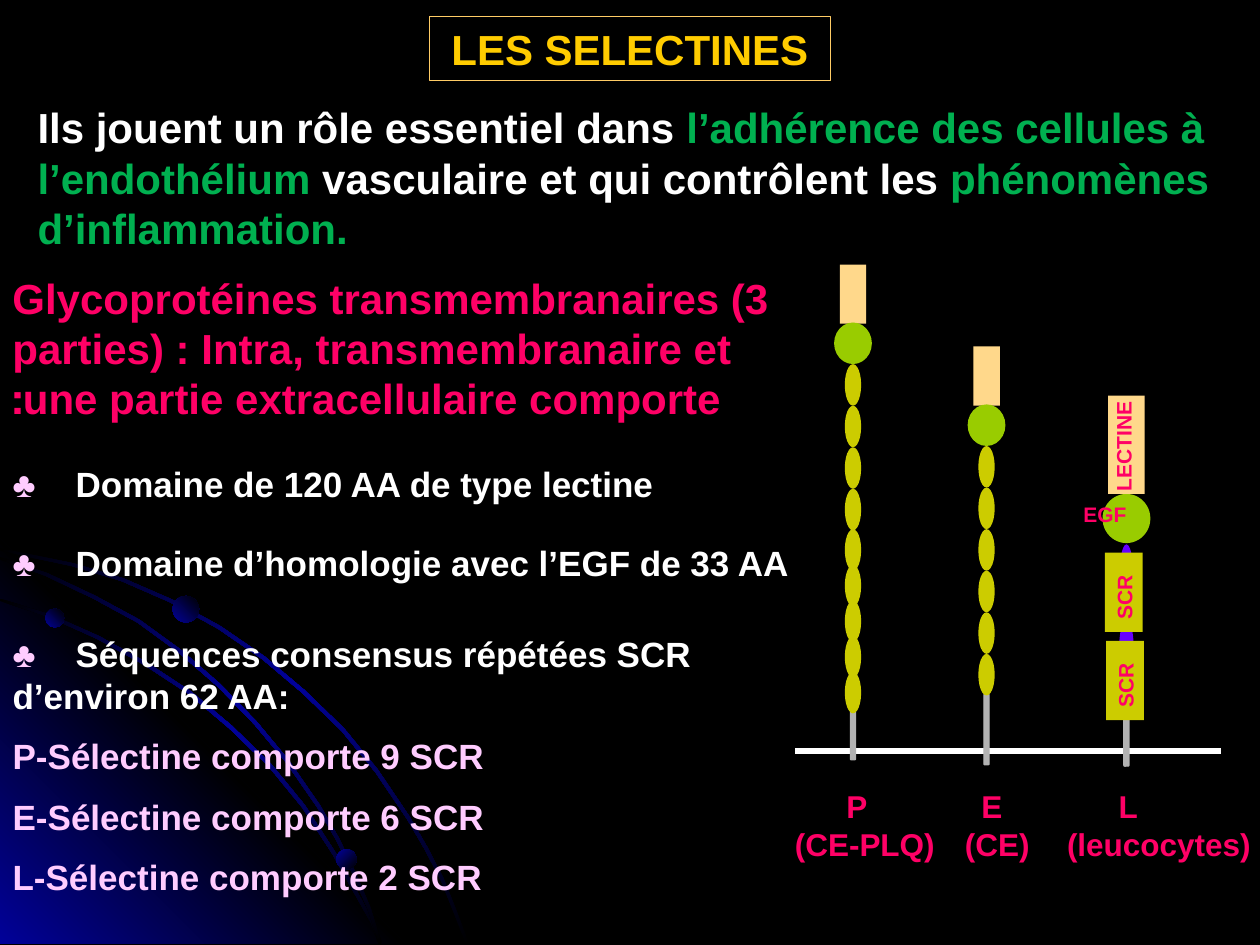
"""Build the slide on selectins, with its list and its membrane diagram."""
from dataclasses import dataclass

import lxml.etree
import pptx
import pptx.dml.color
import pptx.enum.shapes
import pptx.enum.text
import pptx.oxml.ns
import pptx.util

Inches = pptx.util.Inches
Pt = pptx.util.Pt
RGBColor = pptx.dml.color.RGBColor
Kind = pptx.enum.shapes.MSO_SHAPE
Align = pptx.enum.text.PP_ALIGN
Anchor = pptx.enum.text.MSO_ANCHOR
qn = pptx.oxml.ns.qn

BLACK = RGBColor(0, 0, 0)
WHITE = RGBColor(255, 255, 255)
NAVY = RGBColor(0x01, 0x01, 0x99)
ROSE = RGBColor(0xFF, 0x00, 0x66)
PINK = RGBColor(0xFF, 0xCC, 0xFF)
GREEN = RGBColor(0x00, 0xB0, 0x50)
LIME = RGBColor(0x99, 0xCC, 0x00)
OLIVE = RGBColor(0xCC, 0xCC, 0x00)
PEACH = RGBColor(0xFF, 0xD8, 0x8B)
GOLD = RGBColor(0xFF, 0xCC, 0x00)
AMBER = RGBColor(0xFF, 0xCC, 0x66)
GREY = RGBColor(0xB2, 0xB2, 0xB2)
VIOLET = RGBColor(0x66, 0x00, 0xFF)


@dataclass
class Chain:
    mid: float
    tops: list[float]
    stem: float
    length: float


@dataclass
class Label:
    left: float
    indent: float
    name: str
    cells: str


@dataclass
class Item:
    text: str
    gap: float
    club: bool = False


ARCS = [
    [(0, 4.36), (0.28, 4.42), (0.57, 4.48), (0.97, 4.6), (1.36, 4.77), (1.74, 4.98), (2.09, 5.22), (2.41, 5.49),
     (2.72, 5.79), (2.99, 6.12), (3.24, 6.49), (3.38, 6.73), (3.51, 6.98), (3.61, 7.23), (3.71, 7.49)],
    [(0, 4.76), (0.4, 4.89), (0.78, 5.06), (1.16, 5.27), (1.51, 5.5), (1.83, 5.77), (2.14, 6.07), (2.41, 6.4),
     (2.65, 6.77), (2.85, 7.13), (2.95, 7.31), (3.02, 7.49)],
    [(0, 4.43), (0.37, 4.56), (0.75, 4.74), (1.1, 4.93), (1.43, 5.17), (1.74, 5.44), (2.03, 5.74), (2.28, 6.04),
     (2.53, 6.4), (2.68, 6.66), (2.81, 6.93), (2.93, 7.21), (3.02, 7.49)],
]
BALLS = [(0.36, 4.83, 0.15, 315), (2.67, 6.74, 0.16, 45), (1.37, 4.73, 0.21, 315)]
CHAINS = [
    Chain(7.83, [3.54 + 0.33 * i for i in range(6)], 5.51, 0.56),
    Chain(6.77, [2.89 + 0.33 * i for i in range(4)] + [4.2 + 0.283 * i for i in range(5)], 5.61, 0.42),
]
LABELS = [
    Label(6.31, 0.41, "P", "(CE-PLQ)"),
    Label(7.66, 0.13, "E", "(CE)"),
    Label(8.47, 0.41, "L", "(leucocytes)"),
]
ITEMS = [
    Item("Domaine de 120 AA de type lectine", 0, True),
    Item("Domaine d’homologie avec l’EGF de 33 AA", 21, True),
    Item("Séquences consensus répétées SCR d’environ 62 AA:", 28, True),
    Item("P-Sélectine comporte 9 SCR", 10.5),
    Item("E-Sélectine comporte 6 SCR", 10.5),
    Item("L-Sélectine comporte 2 SCR", 10.5),
]
INTRO = [
    ("Ils jouent un rôle essentiel dans ", WHITE),
    ("l’adhérence des cellules à l’endothélium ", GREEN),
    ("vasculaire et qui contrôlent les ", WHITE),
    ("phénomènes d’inflammation.", GREEN),
]


def style(run, size: float, color: RGBColor) -> None:
    run.font.name = "Arial"
    run.font.size = Pt(size)
    run.font.bold = True
    run.font.color.rgb = color


def write(para, text: str, size: float, color: RGBColor) -> None:
    para.text = text
    para.alignment = Align.LEFT
    style(para.runs[0], size, color)


def place(shape, left: float, top: float, width: float, height: float) -> None:
    shape.left, shape.top = Inches(left), Inches(top)
    shape.width, shape.height = Inches(width), Inches(height)


def blend(shape, colors: list[RGBColor], angle: int) -> None:
    shape.shadow.inherit = False
    shape.line.fill.background()
    shape.fill.background()
    empty = shape.element.spPr.find(qn("a:noFill"))
    grad = lxml.etree.Element(qn("a:gradFill"), rotWithShape="1")
    stops = lxml.etree.SubElement(grad, qn("a:gsLst"))
    for i, color in enumerate(colors):
        stop = lxml.etree.SubElement(stops, qn("a:gs"), pos=str(100000 * i // (len(colors) - 1)))
        lxml.etree.SubElement(stop, qn("a:srgbClr"), val=str(color))
    lxml.etree.SubElement(grad, qn("a:lin"), ang=str(angle * 60000), scaled="1")
    empty.getparent().replace(empty, grad)


def outline(slide, points: list[tuple[float, float]]):
    spots = [(Inches(x), Inches(y)) for x, y in points]
    form = slide.shapes.build_freeform(*spots[0])
    form.add_line_segments(spots[1:], close=True)
    return form.convert_to_shape()


def block(slide, kind, mid: float, top: float, width: float, height: float, color: RGBColor):
    shape = slide.shapes.add_shape(kind, 0, 0, 0, 0)
    place(shape, mid - width / 2, top, width, height)
    shape.shadow.inherit = False
    shape.fill.solid()
    shape.fill.fore_color.rgb = color
    shape.line.fill.background()
    return shape


def stem(slide, mid: float, top: float, height: float) -> None:
    shape = block(slide, Kind.ROUNDED_RECTANGLE, mid, top, 0.04, height, GREY)
    shape.adjustments[0] = 0.17
    shape.line.color.rgb = GREY
    shape.line.width = Pt(0.75)


def note(slide, left: float, top: float, width: float, height: float):
    box = slide.shapes.add_textbox(0, 0, 0, 0)
    place(box, left, top, width, height)
    box.text_frame.word_wrap = True
    return box


def chain(slide, data: Chain) -> None:
    stem(slide, data.mid, data.stem, data.length)
    for top in reversed(data.tops):
        block(slide, Kind.OVAL, data.mid, top, 0.13, 0.33, OLIVE)
    head = data.tops[0] - 0.33
    block(slide, Kind.RECTANGLE, data.mid, head - 0.46, 0.21, 0.47, PEACH)
    block(slide, Kind.OVAL, data.mid, head, 0.3, 0.33, LIME)


def large(slide) -> None:
    mid = 8.94
    stem(slide, mid, 5.49, 0.59)
    for top in (4.9, 4.32):
        block(slide, Kind.OVAL, mid, top, 0.12, 0.59, VIOLET)
    block(slide, Kind.OVAL, mid, 3.92, 0.38, 0.39, LIME)
    block(slide, Kind.RECTANGLE, mid, 3.14, 0.29, 0.78, PEACH)
    box = note(slide, 8.4, 3.33, 1.03, 0.3)
    box.rotation = 270
    write(box.text_frame.paragraphs[0], "LECTINE", 12, ROSE)
    box = note(slide, 8.5, 3.93, 0.84, 0.3)
    write(box.text_frame.paragraphs[0], "EGF", 12, ROSE)
    for center, top in ((8.93, 5.25), (8.92, 4.55)):
        shape = block(slide, Kind.RECTANGLE, center, top, 0.63, 0.3, OLIVE)
        shape.rotation = 270
        write(shape.text_frame.paragraphs[0], "SCR", 12, ROSE)


def fill_list(body) -> None:
    place(body, 0, 3.62, 6.67, 3.6)
    frame = body.text_frame
    frame.auto_size = pptx.enum.text.MSO_AUTO_SIZE.NONE
    for i, item in enumerate(ITEMS):
        para = frame.add_paragraph() if i else frame.paragraphs[0]
        write(para, "♣\t" if item.club else item.text, 20, PINK)
        para.space_before = Pt(item.gap)
        props = para._p.get_or_add_pPr()
        props.set("marL", "0")
        props.set("indent", "0")
        lxml.etree.SubElement(props, qn("a:buNone"))
        if item.club:
            tabs = lxml.etree.SubElement(props, qn("a:tabLst"))
            lxml.etree.SubElement(tabs, qn("a:tab"), pos=str(Inches(0.34)), algn="l")
            run = para.add_run()
            run.text = item.text
            style(run, 20, WHITE)


def main() -> None:
    deck = pptx.Presentation()
    deck.slide_width, deck.slide_height = Inches(10), Inches(7.5)
    slide = deck.slides.add_slide(deck.slide_layouts[1])
    slide.background.fill.solid()
    slide.background.fill.fore_color.rgb = BLACK
    title, body = slide.shapes.title, slide.placeholders[1]

    blend(outline(slide, [(3.22, 7.49), (0, 7.49), (0, 4.27)]), [NAVY, BLACK, NAVY], 315)
    for arc in ARCS:
        edge = [(max(x - 0.01, 0), y + 0.01) for x, y in arc]
        back = [(x + 0.01 if x else 0, y - 0.01) for x, y in reversed(arc)]
        blend(outline(slide, edge + back), [BLACK, NAVY, BLACK], 45)
    for left, top, size, angle in BALLS:
        ball = block(slide, Kind.OVAL, left + size / 2, top, size, size, NAVY)
        blend(ball, [NAVY, BLACK], angle)
    for shape in (body, title):
        slide.shapes.element.append(shape.element)

    fill_list(body)
    place(title, 3.41, 0.13, 3.18, 0.51)
    title.line.color.rgb = AMBER
    title.line.width = Pt(0.75)
    title.text_frame.vertical_anchor = Anchor.MIDDLE
    write(title.text_frame.paragraphs[0], "LES SELECTINES", 24, GOLD)
    title.text_frame.paragraphs[0].alignment = Align.CENTER

    para = note(slide, 0.2, 0.76, 9.8, 1.31).text_frame.paragraphs[0]
    for text, color in INTRO:
        run = para.add_run()
        run.text = text
        style(run, 24, color)
    para = note(slide, 0, 2.11, 6.48, 1.31).text_frame.paragraphs[0]
    write(para, "Glycoprotéines transmembranaires (3 parties) : Intra, transmembranaire et "
          "une partie extracellulaire comporte:", 24, ROSE)
    para._p.get_or_add_pPr().set("rtl", "1")

    wall = slide.shapes.add_connector(pptx.enum.shapes.MSO_CONNECTOR.STRAIGHT,
                                      Inches(6.31), Inches(5.96), Inches(9.69), Inches(5.96))
    wall.line.color.rgb = WHITE
    wall.line.width = Pt(3)
    lxml.etree.SubElement(wall.element.spPr, qn("a:effectLst"))
    large(slide)
    for data in CHAINS:
        chain(slide, data)
    for label in LABELS:
        frame = note(slide, label.left - 0.1, 6.2, 1.72, 0.7).text_frame
        write(frame.paragraphs[0], label.name, 18, ROSE)
        frame.paragraphs[0]._p.get_or_add_pPr().set("marL", str(Inches(label.indent)))
        write(frame.add_paragraph(), label.cells, 18, ROSE)
    deck.save("out.pptx")


if __name__ == "__main__":
    main()
